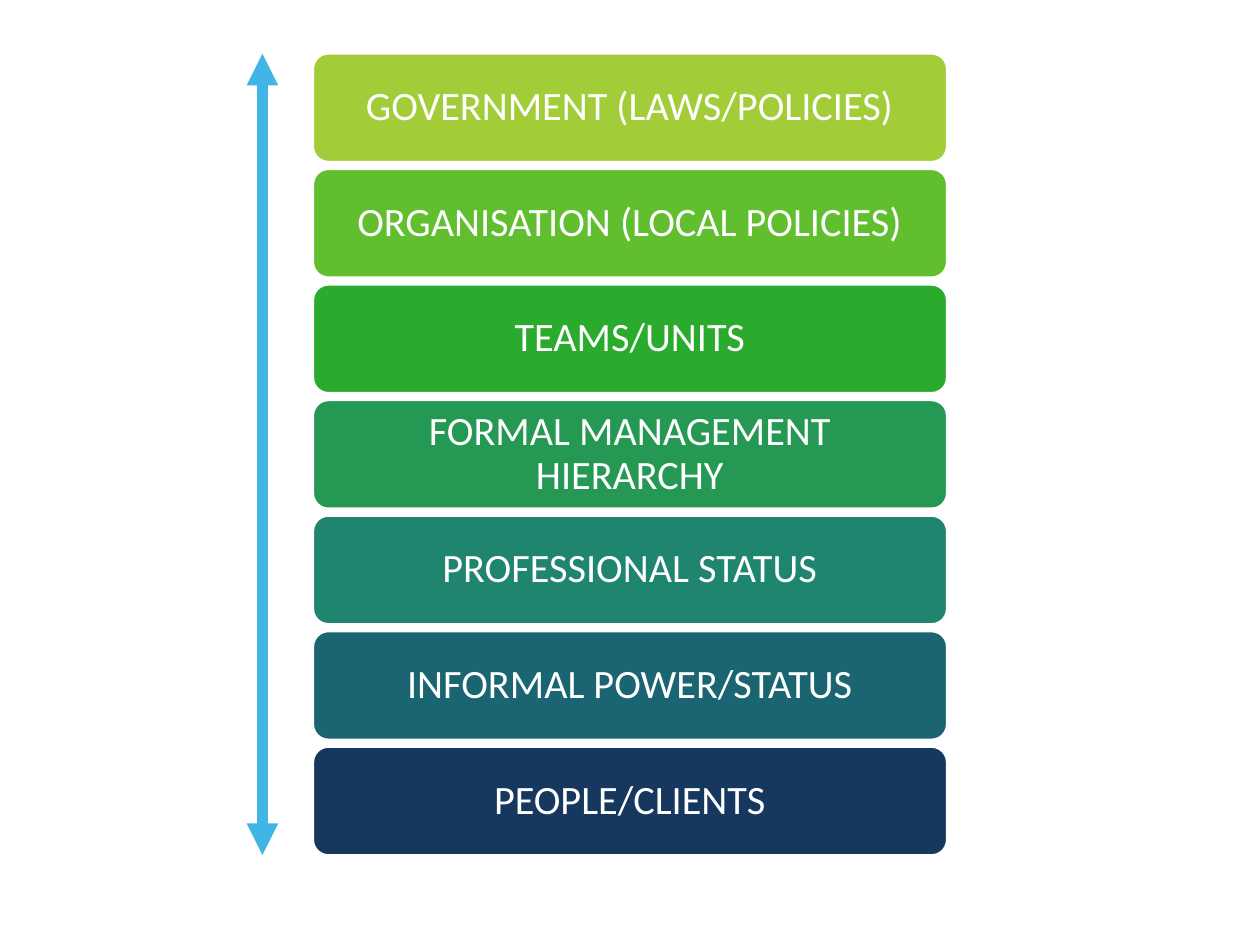
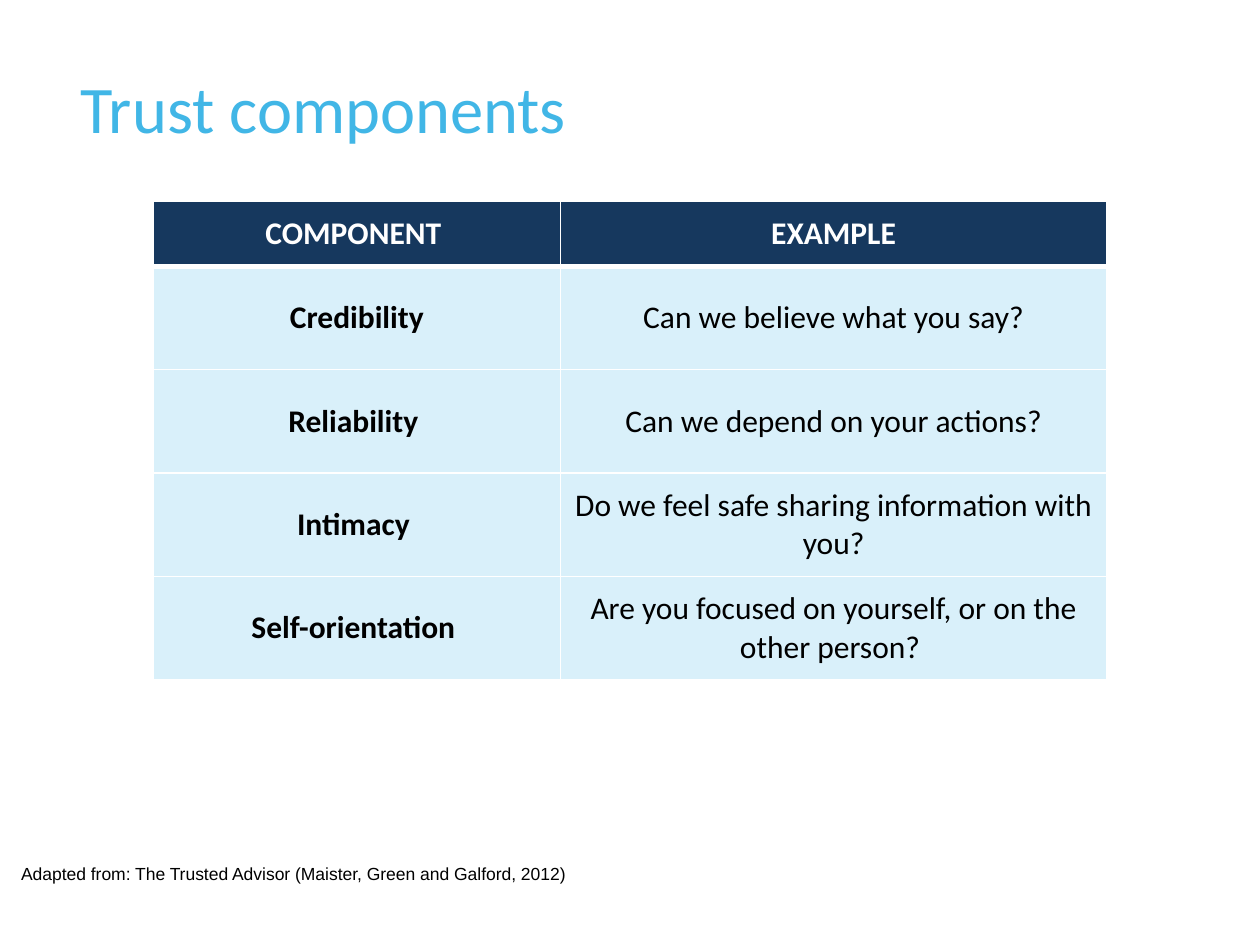
from lxml.etree import SubElement
from pptx import Presentation
from pptx.dml.color import RGBColor
from pptx.enum.shapes import MSO_CONNECTOR, MSO_SHAPE
from pptx.enum.text import MSO_ANCHOR, PP_ALIGN
from pptx.oxml import parse_xml
from pptx.oxml.ns import nsdecls, qn
from pptx.util import Pt

WHITE, BLACK, NAVY, SKY, PALE = "FFFFFF", "000000", "16385E", "41B6E6", "D9F0FA"


def rgb(value):
    return RGBColor.from_string(value)


class Deck:
    """Holds the style and the current slide."""
    font = "Calibri"

    def __init__(self, width, height):
        self.prs = Presentation()
        self.prs.slide_width, self.prs.slide_height = Pt(width), Pt(height)

    def new_slide(self):
        self.s = self.prs.slides.add_slide(self.prs.slide_layouts[6])

    def fill_text(self, tf, text, size, color, align=PP_ALIGN.LEFT, spacing=1.0, **style):
        p = tf.paragraphs[0]
        p.alignment, p.line_spacing = align, spacing
        r = p.add_run()
        r.text = text
        for name, value in {"name": self.font, "size": Pt(size), **style}.items():
            setattr(r.font, name, value)
        r.font.color.rgb = rgb(color)

    def text(self, x, y, w, h, text, size, color, **style):
        tf = self.s.shapes.add_textbox(Pt(x), Pt(y), Pt(w), Pt(h)).text_frame
        tf.word_wrap = True
        self.fill_text(tf, text, size, color, **style)

    def title(self, text):
        self.text(39, 40, 652, 74, text, 38, SKY, spacing=0.9)

    def bar(self, x, y, w, h, text, color):
        sp = self.s.shapes.add_shape(MSO_SHAPE.ROUNDED_RECTANGLE, Pt(x), Pt(y), Pt(w), Pt(h))
        sp.adjustments[0] = 0.14
        sp.shadow.inherit = False
        sp.fill.solid()
        sp.fill.fore_color.rgb = rgb(color)
        sp.line.color.rgb, sp.line.width = rgb(WHITE), Pt(1)
        tf = sp.text_frame
        tf.word_wrap, tf.vertical_anchor = True, MSO_ANCHOR.MIDDLE
        for side in ("left", "right", "top", "bottom"):
            setattr(tf, f"margin_{side}", Pt(9))
        self.fill_text(tf, text, 23, WHITE, align=PP_ALIGN.CENTER, spacing=0.9)

    def double_arrow(self, x, top, bottom):
        arrow = self.s.shapes.add_connector(
            MSO_CONNECTOR.STRAIGHT, Pt(x), Pt(top), Pt(x), Pt(bottom))
        arrow.line.color.rgb, arrow.line.width = rgb(SKY), Pt(6)
        sp_pr = arrow._element.spPr
        ln = sp_pr.find(qn("a:ln"))
        for end in ("a:headEnd", "a:tailEnd"):
            SubElement(ln, qn(end), type="triangle")
        SubElement(sp_pr, qn("a:effectLst"))

    def cell(self, cell, text, fill, color, bold, top, bottom):
        tc_pr = cell._tc.get_or_add_tcPr()
        for side, width in {"L": 1, "R": 1, "T": top, "B": bottom}.items():
            tc_pr.append(parse_xml(
                f'<a:ln{side} {nsdecls("a")} w="{Pt(width)}"><a:solidFill>'
                f'<a:srgbClr val="{WHITE}"/></a:solidFill></a:ln{side}>'))
        cell.fill.solid()
        cell.fill.fore_color.rgb = rgb(fill)
        cell.vertical_anchor = MSO_ANCHOR.MIDDLE
        self.fill_text(cell.text_frame, text, 18, color, align=PP_ALIGN.CENTER, bold=bold)

    def table(self, x, y, widths, heights, rows):
        table = self.s.shapes.add_table(
            len(rows), len(widths), Pt(x), Pt(y), Pt(sum(widths)), Pt(sum(heights))).table
        for column, width in zip(table.columns, widths):
            column.width = Pt(width)
        for i, (height, row) in enumerate(zip(heights, rows)):
            table.rows[i].height = Pt(height)
            header = i == 0
            fill, color = (NAVY, WHITE) if header else (PALE, BLACK)
            for j, text in enumerate(row):
                self.cell(table.cell(i, j), text, fill, color, bold=header or j == 0,
                          top=3 if i == 1 else 1, bottom=3 if header else 1)


def power_levels(deck):
    deck.new_slide()
    levels = [
        ("GOVERNMENT (LAWS/POLICIES)", "A3CD38"),
        ("ORGANISATION (LOCAL POLICIES)", "60BE2F"),
        ("TEAMS/UNITS", "2AAB2E"),
        ("FORMAL MANAGEMENT HIERARCHY", "259853"),
        ("PROFESSIONAL STATUS", "20856E"),
        ("INFORMAL POWER/STATUS", "1B6471"),
        ("PEOPLE/CLIENTS", NAVY),
    ]
    top, height, step = 30.7, 61.7, 66.03
    # Arrow spans the whole stack
    deck.double_arrow(150, top, top + (len(levels) - 1) * step + height)
    # Stack of levels
    for i, (label, color) in enumerate(levels):
        deck.bar(179, top + i * step, 362, height, label, color)


def trust_components(deck):
    deck.new_slide()
    deck.title("Trust components")
    # Source line
    deck.text(5, 489.6, 360, 20,
              "Adapted from: The Trusted Advisor (Maister, Green and Galford, 2012)",
              10, BLACK, name="Arial")
    # Components and examples
    rows = [
        ("COMPONENT ", "EXAMPLE"),
        ("Credibility", "Can we believe what you say?"),
        ("Reliability ", "Can we depend on your actions?"),
        ("Intimacy ", "Do we feel safe sharing information with you?"),
        ("Self-orientation ", "Are you focused on yourself, or on the other person? "),
    ]
    deck.table(87.8, 114.8, [232.4, 312.4], [37.4] + [59.1] * 4, rows)


def main():
    deck = Deck(720, 540)
    power_levels(deck)
    trust_components(deck)
    deck.prs.save("out.pptx")


if __name__ == "__main__":
    main()
